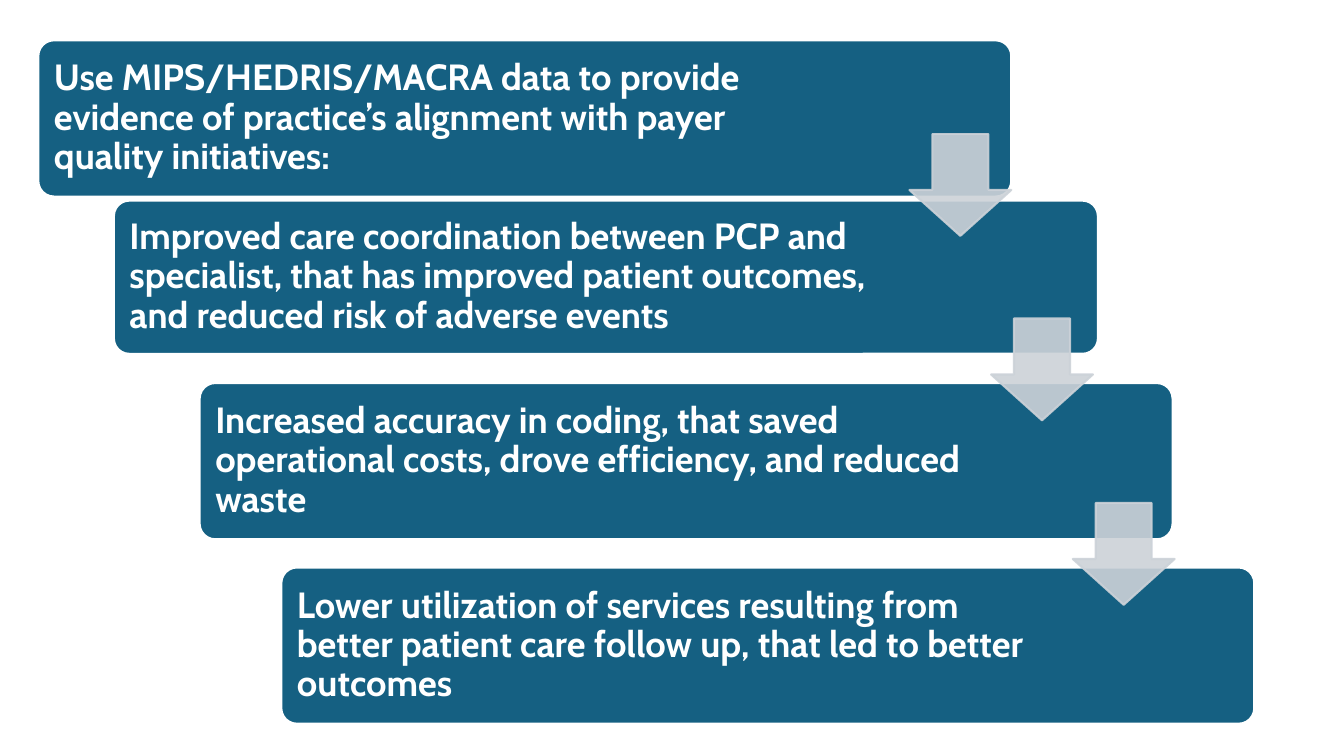
"""Builds a slide of four cascading steps joined by block arrows."""
from lxml import etree
from pptx import Presentation
from pptx.dml.color import RGBColor
from pptx.enum.shapes import MSO_SHAPE
from pptx.enum.text import MSO_ANCHOR, PP_ALIGN
from pptx.oxml.ns import qn
from pptx.util import Inches, Pt

BOX, ARROW = MSO_SHAPE.ROUNDED_RECTANGLE, MSO_SHAPE.DOWN_ARROW
MIDDLE, LEFT = MSO_ANCHOR.MIDDLE, PP_ALIGN.LEFT
BLUE = RGBColor(0x15, 0x60, 0x82)
GREY = RGBColor(0xCC, 0xD2, 0xD8)
WHITE = RGBColor(0xFF, 0xFF, 0xFF)

STEPS = [
    ("Use MIPS/HEDRIS/MACRA data to provide evidence of practice’s "
     "alignment with payer quality initiatives:", (0.38, 0.4, 9.65, 1.55)),
    ("Improved care coordination between PCP and specialist, that has "
     "improved patient outcomes, and reduced risk of adverse events",
     (1.13, 1.99, 9.76, 1.52)),
    ("Increased accuracy in coding, that saved operational costs, "
     "drove efficiency, and reduced waste", (1.98, 3.8, 9.65, 1.55)),
    ("Lower utilization of services resulting from better patient care "
     "follow up, that led to better outcomes", (2.79, 5.63, 9.65, 1.55)),
]
ARROW_X, ARROW_Y, ARROW_SIZE = 9.02, 1.33, 1.01
STEP_X, STEP_Y = 0.81, 1.83
PAD, TEXT_GAP = 0.11, 1.9


def add_block(slide, kind, place, fill, line, adjust):
    shape = slide.shapes.add_shape(kind, *[Inches(v) for v in place])
    shape.shadow.inherit = False
    for i, value in enumerate(adjust):
        shape.adjustments[i] = value
    shape.fill.solid()
    shape.fill.fore_color.rgb = fill
    shape.line.color.rgb = line
    shape.line.width = Pt(1.5)
    return shape


def add_step(slide, text, place):
    frame = add_block(slide, BOX, place, BLUE, WHITE, [0.1]).text_frame
    frame.word_wrap = True
    frame.vertical_anchor = MIDDLE
    frame.margin_left = frame.margin_top = frame.margin_bottom = Inches(PAD)
    frame.margin_right = Inches(TEXT_GAP)
    frame.text = text
    para = frame.paragraphs[0]
    para.alignment = LEFT
    para.line_spacing = 0.9
    font = para.runs[0].font
    font.name, font.size, font.bold = "Cabin", Pt(26), True
    font.color.rgb = WHITE


def add_arrow(slide, i):
    place = (ARROW_X + i * STEP_X, ARROW_Y + i * STEP_Y,
             ARROW_SIZE, ARROW_SIZE)
    arrow = add_block(slide, ARROW, place, GREY, GREY, [0.55, 0.45])
    for color in arrow._element.spPr.iter(qn("a:srgbClr")):
        etree.SubElement(color, qn("a:alpha")).set("val", "90000")


def main():
    deck = Presentation()
    deck.slide_width, deck.slide_height = Inches(13.33), Inches(7.5)
    slide = deck.slides.add_slide(deck.slide_layouts[6])
    for text, place in STEPS:
        add_step(slide, text, place)
    for i in range(len(STEPS) - 1):
        add_arrow(slide, i)
    deck.save("out.pptx")


if __name__ == "__main__":
    main()
